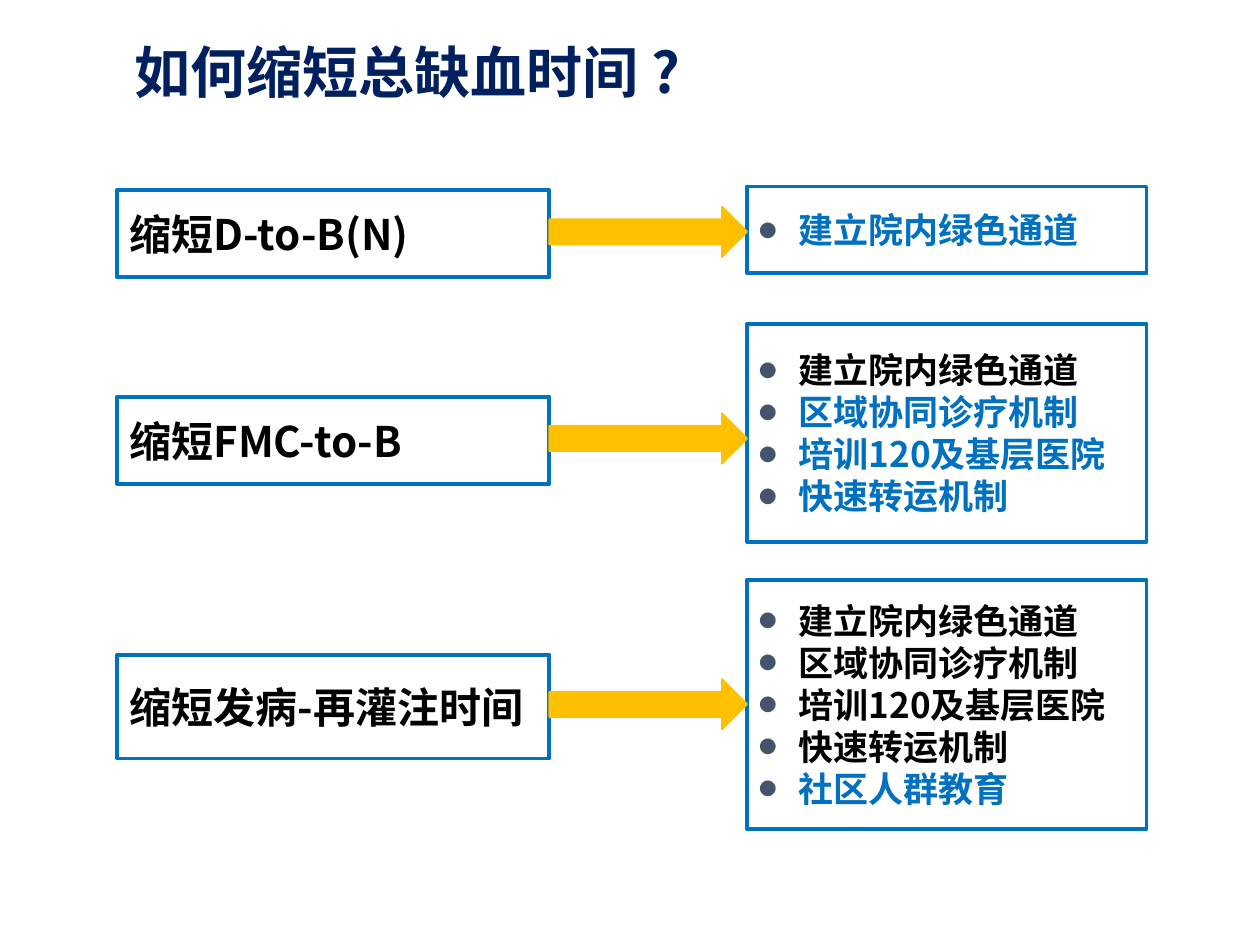
import pptx
import pptx.dml.color
import pptx.enum.shapes
import pptx.enum.text
import pptx.oxml.ns
import pptx.util
from lxml import etree
from pptx.util import Inches

FONT = "Noto Sans CJK SC"
NAVY, BLUE, BLACK, WHITE = "002060", "0070C0", "000000", "FFFFFF"
AMBER, SLATE = "FFC000", "44546A"
SHAPES = pptx.enum.shapes.MSO_SHAPE


def color(value):
    return pptx.dml.color.RGBColor.from_string(value)


def add_text_shape(kind, box, lines, size, fill=None, line=None, width=2.25, bullets=False):
    """Add a preset shape, or a text box without kind; lines are (text, color)."""
    lengths = [Inches(value) for value in box]
    if kind is None:
        shape = slide.shapes.add_textbox(*lengths)
    else:
        shape = slide.shapes.add_shape(kind, *lengths)
        shape.shadow.inherit = False
        shape.fill.solid()
        shape.fill.fore_color.rgb = color(fill)
        shape.line.color.rgb = color(line)
        shape.line.width = pptx.util.Pt(width)
    frame = shape.text_frame
    frame.word_wrap = True
    frame.vertical_anchor = pptx.enum.text.MSO_ANCHOR.MIDDLE

    for index, (text, text_color) in enumerate(lines):
        paragraph = frame.add_paragraph() if index else frame.paragraphs[0]
        paragraph.alignment = pptx.enum.text.PP_ALIGN.LEFT
        if kind is not None:
            paragraph.line_spacing = pptx.util.Pt(size * 1.2)
        if bullets:
            properties = paragraph._p.get_or_add_pPr()
            properties.set("marL", str(Inches(0.31)))
            properties.set("indent", str(-Inches(0.31)))
            qn = pptx.oxml.ns.qn
            bullet_color = etree.SubElement(properties, qn("a:buClr"))
            etree.SubElement(bullet_color, qn("a:srgbClr"), val=SLATE)
            etree.SubElement(properties, qn("a:buSzPct"), val="50000")
            etree.SubElement(properties, qn("a:buFont"), typeface=FONT)
            etree.SubElement(properties, qn("a:buChar"), char="●")
        run = paragraph.add_run()
        run.text = text
        font_format = {"name": FONT, "size": pptx.util.Pt(size), "bold": True}
        for name, value in font_format.items():
            setattr(run.font, name, value)
        run.font.color.rgb = color(text_color)
        east_asian = etree.SubElement(run._r.get_or_add_rPr(), pptx.oxml.ns.qn("a:ea"))
        east_asian.set("typeface", FONT)
    return shape


presentation = pptx.Presentation()
presentation.slide_width = Inches(10)
presentation.slide_height = Inches(7.5)
slide = presentation.slides.add_slide(presentation.slide_layouts[6])

# Title
add_text_shape(None, (0.97, 0, 9.03, 1.13), [("如何缩短总缺血时间 ?", NAVY)], 32)

# Each goal keeps the measures of the goal before it; the added ones are blue
measures = ["建立院内绿色通道", "区域协同诊疗机制", "培训120及基层医院", "快速转运机制", "社区人群教育"]
# goal, goal top and height, measures top and height, measure count, arrow middle
goals = [
    ("缩短D-to-B(N)", 1.51, 0.69, 1.48, 0.69, 1, 1.84),
    ("缩短FMC-to-B", 3.15, 0.69, 2.57, 1.73, 4, 3.48),
    ("缩短发病-再灌注时间", 5.2, 0.82, 4.6, 1.98, 5, 5.59),
]
known = 0
for goal, goal_top, goal_height, top, height, count, middle in goals:
    # Goal box
    add_text_shape(SHAPES.RECTANGLE, (0.93, goal_top, 3.43, goal_height),
                   [(goal, BLACK)], 24, WHITE, BLUE)
    # Measures box
    lines = [(measure, BLACK if index < known else BLUE)
             for index, measure in enumerate(measures[:count])]
    add_text_shape(SHAPES.RECTANGLE, (5.93, top, 3.17, height),
                   lines, 20, WHITE, BLUE, bullets=True)
    # Arrow from goal to measures
    add_text_shape(SHAPES.RIGHT_ARROW, (4.36, middle - 0.2, 1.57, 0.4),
                   [], 20, AMBER, AMBER, width=1)
    known = count

presentation.save("out.pptx")
